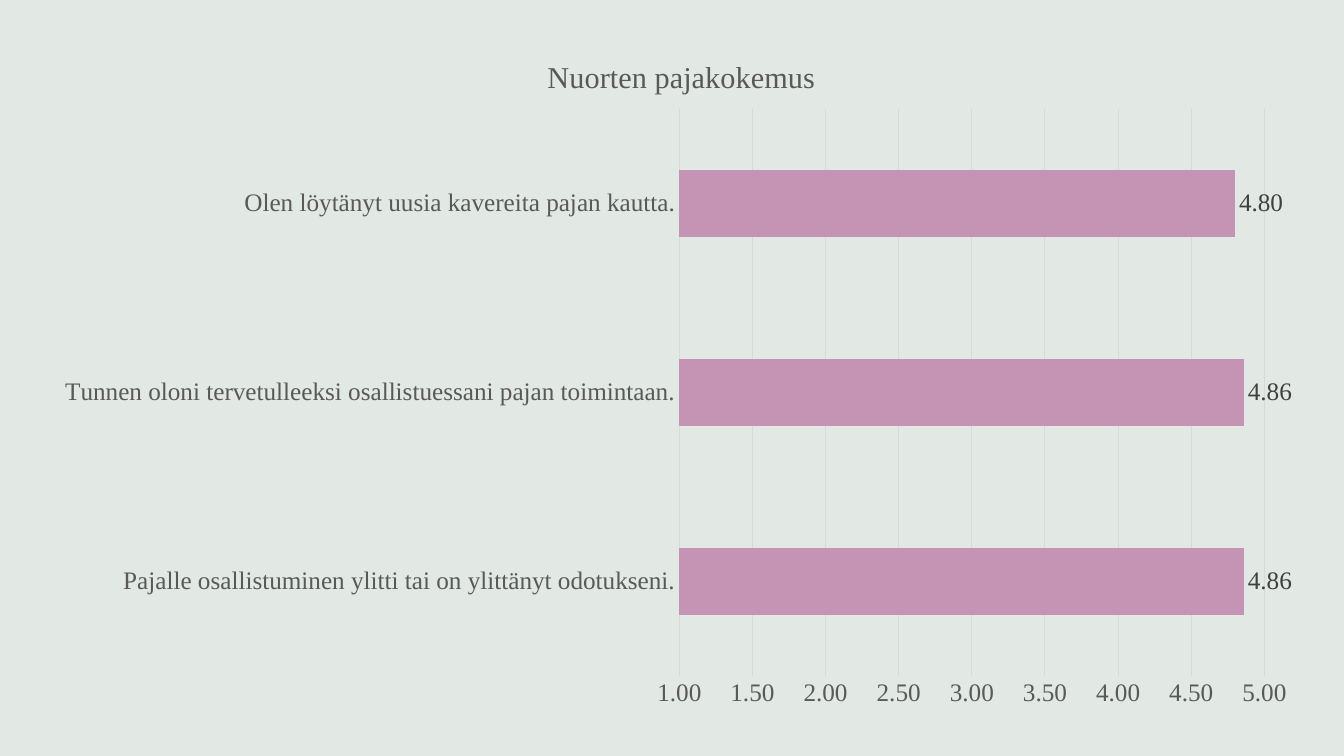
from dataclasses import dataclass

from lxml.etree import SubElement
from pptx import Presentation
from pptx.chart.data import CategoryChartData as ChartData
from pptx.dml.color import RGBColor as RGB
from pptx.enum.chart import (XL_CHART_TYPE as Kind, XL_LABEL_POSITION as Spot,
                             XL_TICK_MARK as Tick)
from pptx.oxml import parse_xml
from pptx.oxml.ns import nsdecls, qn
from pptx.util import Cm, Pt


@dataclass(frozen=True)
class Theme:
    back: str = "E2E8E4"
    bar: str = "C593B3"
    text: str = "595959"
    label: str = "404040"
    grid: str = "D9D9D9"
    face: str = "Times New Roman"
    size: float = 18
    head: float = 21.6
    rule: float = 0.75


THEME = Theme()
TITLE = "Nuorten pajakokemus"
SCORES = {
    "Pajalle osallistuminen ylitti tai on ylittänyt odotukseni.": 4.86,
    "Tunnen oloni tervetulleeksi osallistuessani pajan toimintaan.": 4.86,
    "Olen löytänyt uusia kavereita pajan kautta.": 4.80,
}


def assign(item, values):
    for name, value in values.items():
        setattr(item, name, value)


def style(font, color, size=THEME.size):
    assign(font, {"name": THEME.face, "size": Pt(size), "bold": False})
    font.color.rgb = RGB.from_string(color)


def rule(line):
    line.width = Pt(THEME.rule)
    line.color.rgb = RGB.from_string(THEME.grid)


def place(node, index, values):
    """Pin a chart part at fractions of the chart's size."""
    for old in node.findall(qn("c:layout")):
        node.remove(old)
    layout = parse_xml(f"<c:layout {nsdecls('c')}><c:manualLayout/></c:layout>")
    for name, value in values.items():
        SubElement(layout[0], qn(f"c:{name}")).set("val", str(value))
    node.insert(index, layout)


def add_title(chart):
    chart.has_title = True
    title = chart.chart_title
    title.include_in_layout = False
    para = title.text_frame.paragraphs[0]
    run = para.add_run()
    run.text = TITLE
    style(run.font, THEME.text, THEME.head)
    place(title.element, 1,
          {"xMode": "edge", "yMode": "edge", "x": 0.395, "y": 0.04})


def set_axes(chart):
    cats, vals = chart.category_axis, chart.value_axis
    for axis in (cats, vals):
        assign(axis, {"major_tick_mark": Tick.NONE,
                      "minor_tick_mark": Tick.NONE})
        style(axis.tick_labels.font, THEME.text)
    cats.has_major_gridlines = False
    rule(cats.format.line)
    assign(vals, {"minimum_scale": 1, "maximum_scale": 5, "major_unit": 0.5,
                  "has_major_gridlines": True})
    assign(vals.tick_labels, {"number_format": "0.00",
                              "number_format_is_linked": False})
    rule(vals.major_gridlines.format.line)
    vals.format.line.fill.background()


def set_bars(chart):
    plot = chart.plots[0]
    assign(plot, {"gap_width": 182, "vary_by_categories": False,
                  "has_data_labels": True})
    assign(plot.data_labels, {"show_value": True, "number_format": "0.00",
                              "number_format_is_linked": False,
                              "position": Spot.OUTSIDE_END})
    style(plot.data_labels.font, THEME.label)
    fill = plot.series[0].format.fill
    fill.solid()
    fill.fore_color.rgb = RGB.from_string(THEME.bar)


def add_bars(slide, box):
    data = ChartData(number_format="0.00")
    data.categories = SCORES
    data.add_series("Series 1", SCORES.values())
    chart = slide.shapes.add_chart(Kind.BAR_CLUSTERED, *box, data).chart
    chart.has_legend = False
    style(chart.font, THEME.text)
    add_title(chart)
    set_axes(chart)
    set_bars(chart)
    place(chart.element.find(".//" + qn("c:plotArea")), 0,
          {"layoutTarget": "inner", "xMode": "edge", "yMode": "edge",
           "x": 0.503, "y": 0.121, "w": 0.46, "h": 0.812})


def main():
    deck = Presentation()
    assign(deck, {"slide_width": Cm(33.87), "slide_height": Cm(19.05)})
    slide = deck.slides.add_slide(deck.slide_layouts[6])
    back = slide.background.fill
    back.solid()
    back.fore_color.rgb = RGB.from_string(THEME.back)
    add_bars(slide, (Cm(1), Cm(0.61), Cm(32.05), Cm(17.6)))
    deck.save("out.pptx")


if __name__ == "__main__":
    main()
